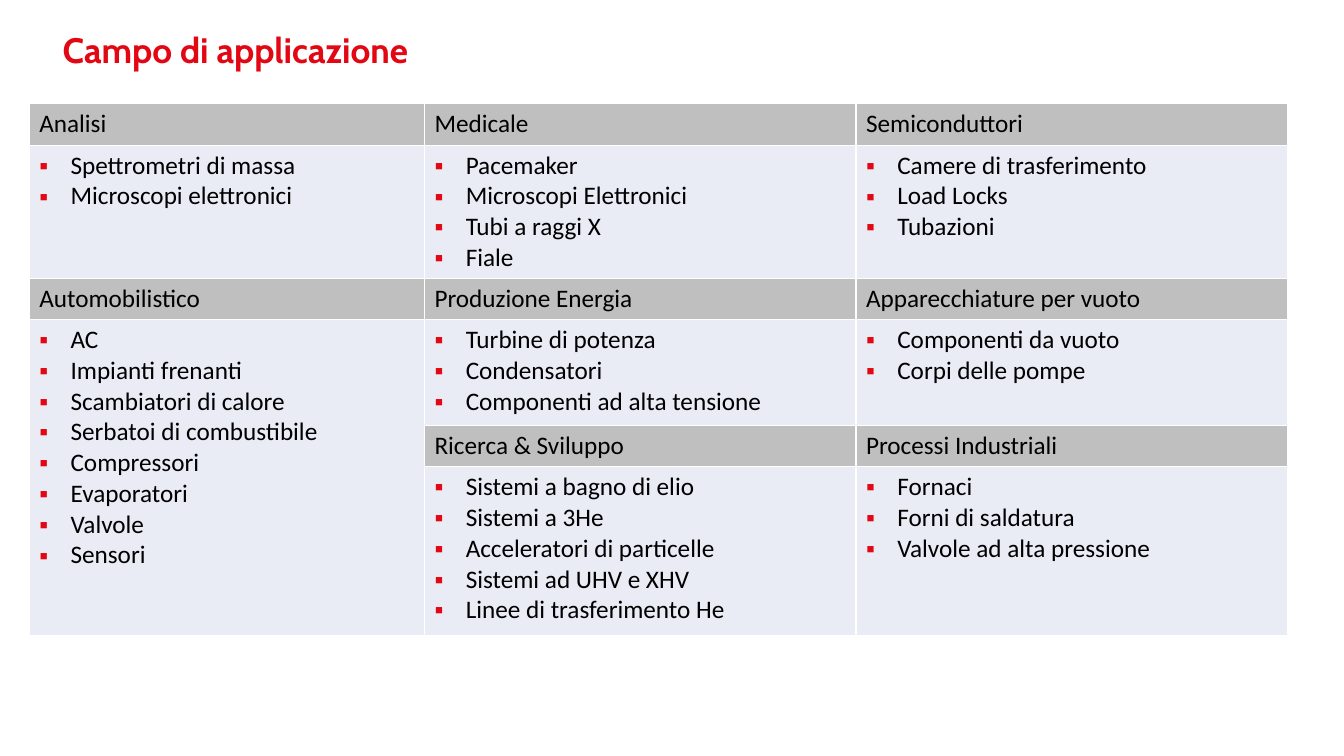
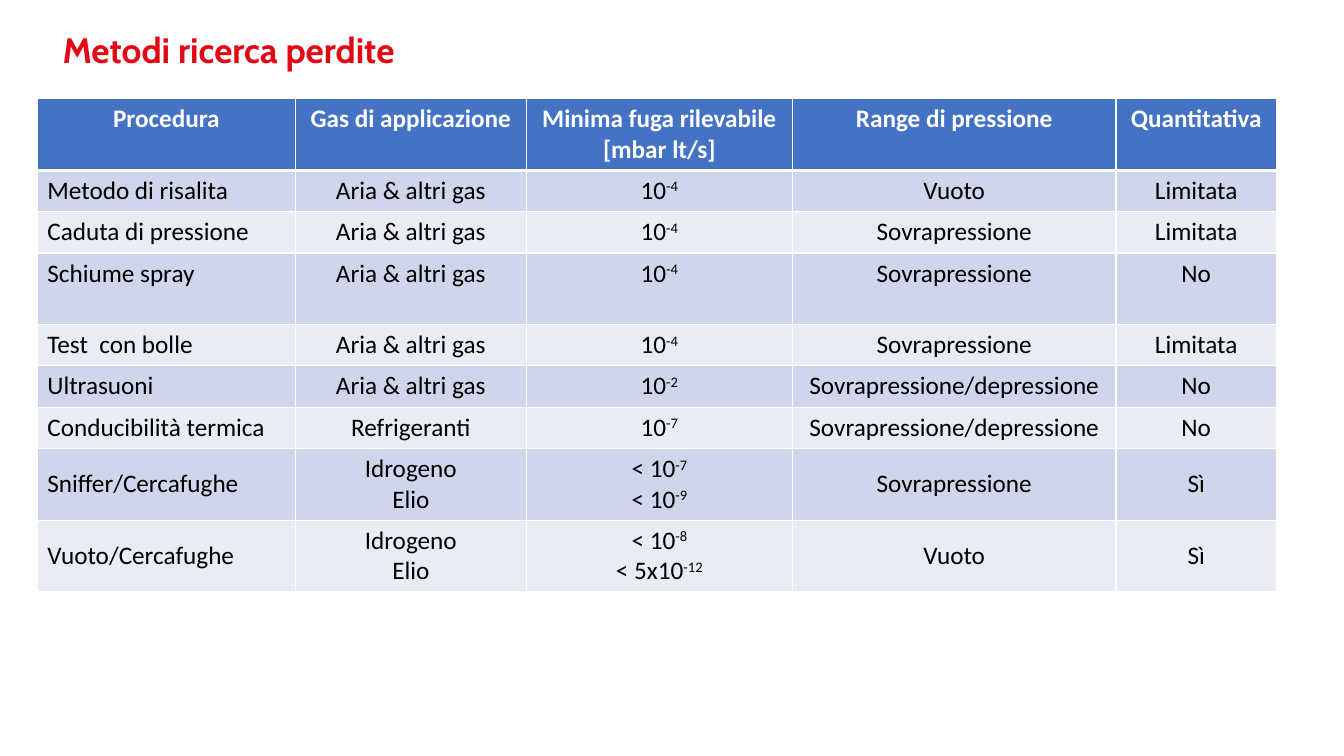
from lxml import etree
from pptx import Presentation
from pptx.dml.color import RGBColor
from pptx.enum.text import MSO_ANCHOR as Anchor, MSO_AUTO_SIZE as Fit, PP_ALIGN as Align
from pptx.oxml.ns import qn
from pptx.util import Inches, Pt

RED, WHITE, BLACK = "E30613", "FFFFFF", "000000"
GREY, BLUE, MID, PALE = "BFBFBF", "4472C4", "CFD5EA", "E9EBF5"
LINE, TALL = 0.41, 0.71

FIELDS = [
    [("Analisi", ["Spettrometri di massa", "Microscopi elettronici"]),
     ("Automobilistico", ["AC", "Impianti frenanti", "Scambiatori di calore",
                          "Serbatoi di combustibile", "Compressori",
                          "Evaporatori", "Valvole", "Sensori"])],
    [("Medicale", ["Pacemaker", "Microscopi Elettronici", "Tubi a raggi X", "Fiale"]),
     ("Produzione Energia", ["Turbine di potenza", "Condensatori",
                             "Componenti ad alta tensione"]),
     ("Ricerca & Sviluppo", ["Sistemi a bagno di elio", "Sistemi a 3He",
                             "Acceleratori di particelle", "Sistemi ad UHV e XHV",
                             "Linee di trasferimento He"])],
    [("Semiconduttori", ["Camere di trasferimento", "Load Locks", "Tubazioni"]),
     ("Apparecchiature per vuoto", ["Componenti da vuoto", "Corpi delle pompe"]),
     ("Processi Industriali", ["Fornaci", "Forni di saldatura",
                               "Valvole ad alta pressione"])],
]

HEADS = ["Procedura", "Gas di applicazione", "Minima fuga rilevabile\n[mbar lt/s]",
         "Range di pressione", "Quantitativa"]
AIR, OVER, BOTH = "Aria & altri gas", "Sovrapressione", "Sovrapressione/depressione"
PAIR = ["Idrogeno", "Elio"]
# Text after ^ is raised; a list holds one paragraph per item.
METHODS = [
    ["Metodo di risalita", AIR, "10^-4", "Vuoto", "Limitata"],
    ["Caduta di pressione", AIR, "10^-4", OVER, "Limitata"],
    ["Schiume spray", AIR, "10^-4", OVER, "No"],
    ["Test  con bolle", AIR, "10^-4", OVER, "Limitata"],
    ["Ultrasuoni", AIR, "10^-2", BOTH, "No"],
    ["Conducibilità termica", "Refrigeranti", "10^-7", BOTH, "No"],
    ["Sniffer/Cercafughe", PAIR, ["< 10^-7", "< 10^-9"], OVER, "Sì"],
    ["Vuoto/Cercafughe", PAIR, ["< 10^-8", "< 5x10^-12"], "Vuoto", "Sì"],
]


def color(code):
    return RGBColor.from_string(code)


def style(font, name, size, code, bold=False):
    font.name, font.size, font.bold = name, Pt(size), bold
    font.color.rgb = color(code)


def add_slide(deck, text):
    slide = deck.slides.add_slide(deck.slide_layouts[5])
    title = slide.shapes.title
    title.left, title.top = Inches(0.52), Inches(0.29)
    title.width, title.height = Inches(11.5), Inches(0.46)
    frame = title.text_frame
    frame.text = text
    frame.auto_size, frame.word_wrap = Fit.NONE, True
    frame.vertical_anchor = Anchor.MIDDLE
    para = frame.paragraphs[0]
    para.alignment, para.line_spacing = Align.LEFT, 0.9
    style(para.runs[0].font, "Cabin", 25.2, RED, True)
    return slide


def add_grid(slide, left, top, cols, rows):
    frame = slide.shapes.add_table(len(rows), len(cols), Inches(left), Inches(top),
                                   Inches(sum(cols)), Inches(sum(rows)))
    grid = frame.table
    grid.first_row = grid.horz_banding = False
    for col, width in zip(grid.columns, cols):
        col.width = Inches(width)
    for row, height in zip(grid.rows, rows):
        row.height = Inches(height)
    return grid


def paint(cell, fill, top=1, low=1):
    """Give the cell white borders and a fill."""
    props = cell._tc.get_or_add_tcPr()
    for side, width in zip("LRTB", (1, 1, top, low)):
        edge = etree.SubElement(props, qn(f"a:ln{side}"), w=str(Pt(width)))
        solid = etree.SubElement(edge, qn("a:solidFill"))
        etree.SubElement(solid, qn("a:srgbClr"), val=WHITE)
    cell.fill.solid()
    cell.fill.fore_color.rgb = color(fill)


def add_bullet(para):
    props = para._p.get_or_add_pPr()
    indent = Inches(0.31)
    props.set("marL", str(indent))
    props.set("indent", str(-indent))
    tint = etree.SubElement(props, qn("a:buClr"))
    etree.SubElement(tint, qn("a:srgbClr"), val=RED)
    etree.SubElement(props, qn("a:buFont"), typeface="Arial")
    etree.SubElement(props, qn("a:buChar"), char="▪")


def write(cell, text, code=BLACK, bold=False, align=Align.LEFT, bullet=False):
    """Fill the cell with one paragraph per item, raising what follows ^."""
    items = [text] if isinstance(text, str) else text
    frame = cell.text_frame
    for i, item in enumerate(items):
        para = frame.add_paragraph() if i else frame.paragraphs[0]
        base, _, power = item.partition("^")
        para.text = base
        para.alignment = align
        if bullet:
            add_bullet(para)
        if power:
            run = para.add_run()
            run.text = power
            run._r.get_or_add_rPr().set("baseline", "30000")
        for run in para.runs:
            style(run.font, "Calibri", 18, code, bold)


def show_fields(deck):
    slide = add_slide(deck, "Campo di applicazione")
    grid = add_grid(slide, 0.29, 1.03, [3.92, 4.28, 4.28],
                    [LINE, 1.32, LINE, 1.05, LINE, 1.68])
    for i, cell in enumerate(grid.iter_cells()):
        row, col = divmod(i, len(FIELDS))
        merged = col == 0 and row > 2
        paint(cell, PALE if row % 2 or merged else GREY)
    grid.cell(3, 0).merge(grid.cell(5, 0))
    for col, groups in enumerate(FIELDS):
        for i, (name, items) in enumerate(groups):
            write(grid.cell(2 * i, col), name)
            write(grid.cell(2 * i + 1, col), items, bullet=True)


def show_methods(deck):
    slide = add_slide(deck, "Metodi ricerca perdite")
    rows = [TALL, LINE, LINE, TALL, LINE, LINE, LINE, TALL, TALL]
    grid = add_grid(slide, 0.37, 0.98, [2.56, 2.29, 2.64, 3.21, 1.59], rows)
    for col, head in enumerate(HEADS):
        cell = grid.cell(0, col)
        paint(cell, BLUE, low=3)
        write(cell, head, WHITE, True, Align.CENTER)
    for row, method in enumerate(METHODS, 1):
        for col, text in enumerate(method):
            cell = grid.cell(row, col)
            paint(cell, MID if row % 2 else PALE, top=3 if row == 1 else 1)
            write(cell, text, align=Align.CENTER if col else Align.LEFT)
            if PAIR in method:
                cell.vertical_anchor = Anchor.MIDDLE


def main():
    deck = Presentation()
    deck.slide_width, deck.slide_height = Inches(13.33), Inches(7.5)
    show_fields(deck)
    show_methods(deck)
    deck.save("out.pptx")


if __name__ == "__main__":
    main()
